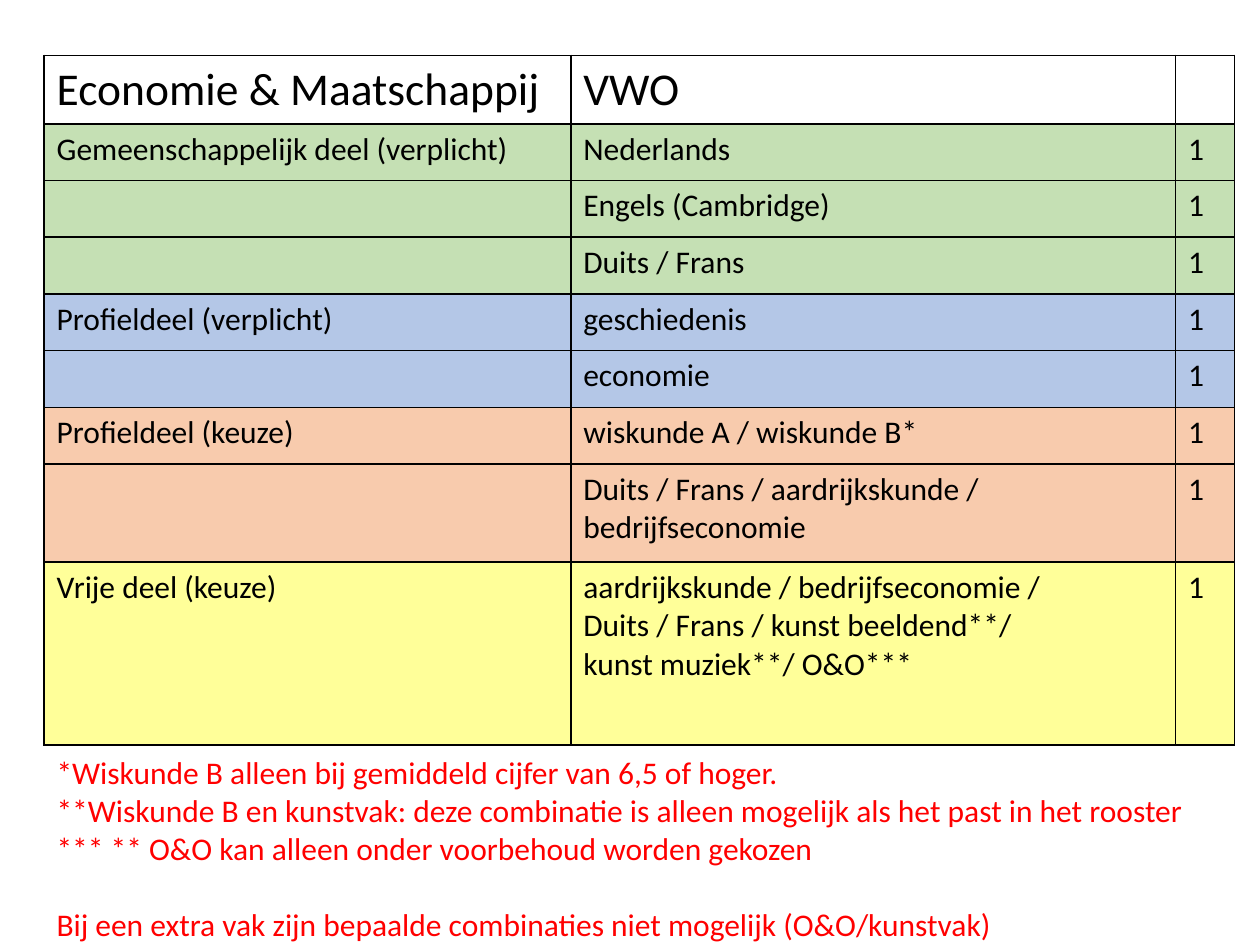
from dataclasses import dataclass

from lxml.etree import SubElement
from pptx import Presentation
from pptx.dml.color import RGBColor
from pptx.oxml.ns import qn
from pptx.util import Inches, Pt


@dataclass(frozen=True)
class Theme:
    font: str = "Calibri"
    heading_size: int = 26
    body_size: int = 18
    border_width: int = 1
    black: str = "000000"
    red: str = "FF0000"
    green: str = "C5E0B4"
    blue: str = "B4C7E7"
    orange: str = "F8CBAD"
    yellow: str = "FFFF99"


class SlideBuilder:
    def __init__(self, slide, theme):
        self.slide = slide
        self.theme = theme

    def add_lines(self, text_frame, lines, size, color):
        """Add one paragraph per line."""
        for index, line in enumerate(lines):
            paragraph = text_frame.paragraphs[0] if index == 0 else text_frame.add_paragraph()
            run = paragraph.add_run()
            run.text = line
            run.font.name = self.theme.font
            run.font.size = Pt(size)
            run.font.color.rgb = RGBColor.from_string(color)

    def add_borders(self, cell):
        properties = cell._tc.get_or_add_tcPr()
        for side in ("a:lnL", "a:lnR", "a:lnT", "a:lnB"):
            line = SubElement(properties, qn(side), w=str(Pt(self.theme.border_width)))
            fill = SubElement(line, qn("a:solidFill"))
            SubElement(fill, qn("a:srgbClr"), val=self.theme.black)

    def add_table(self, left, top, column_widths, rows):
        """Each row is (height, fill, cell texts); the first is the heading."""
        height = sum(row[0] for row in rows)
        frame = self.slide.shapes.add_table(
            len(rows), len(column_widths), Inches(left), Inches(top),
            Inches(sum(column_widths)), Inches(height))
        table = frame.table
        table.first_row = table.horz_banding = False
        for column, width in zip(table.columns, column_widths):
            column.width = Inches(width)
        for row_index, (row_height, fill, texts) in enumerate(rows):
            table.rows[row_index].height = Inches(row_height)
            size = self.theme.body_size if row_index else self.theme.heading_size
            for column_index, text in enumerate(texts):
                cell = table.cell(row_index, column_index)
                self.add_borders(cell)
                if fill:
                    cell.fill.solid()
                    cell.fill.fore_color.rgb = RGBColor.from_string(fill)
                else:
                    cell.fill.background()
                if text:
                    self.add_lines(cell.text_frame, text.split("\n"), size, self.theme.black)

    def add_notes_box(self, left, top, width, height, lines):
        """The last line stands apart from the ones above it."""
        box = self.slide.shapes.add_textbox(
            Inches(left), Inches(top), Inches(width), Inches(height))
        box.text_frame.word_wrap = True
        self.add_lines(box.text_frame, lines, self.theme.body_size, self.theme.red)
        box.text_frame.paragraphs[-1].space_before = Pt(1.2 * self.theme.body_size)


def main():
    presentation = Presentation()
    presentation.slide_width = Inches(10)
    presentation.slide_height = Inches(7.5)
    slide = presentation.slides.add_slide(presentation.slide_layouts[6])
    theme = Theme()
    builder = SlideBuilder(slide, theme)
    left = 0.35

    # Subject table
    single = 0.45
    builder.add_table(left, 0.44, (4.18, 4.8, 0.47), [
        (0.53, None, ("Economie & Maatschappij", "VWO", "")),
        (single, theme.green, ("Gemeenschappelijk deel (verplicht)", "Nederlands", "1")),
        (single, theme.green, ("", "Engels (Cambridge)", "1")),
        (single, theme.green, ("", "Duits / Frans", "1")),
        (single, theme.blue, ("Profieldeel (verplicht)", "geschiedenis", "1")),
        (single, theme.blue, ("", "economie", "1")),
        (single, theme.orange, ("Profieldeel (keuze)", "wiskunde A / wiskunde B*", "1")),
        (0.78, theme.orange, ("", "Duits / Frans / aardrijkskunde / bedrijfseconomie", "1")),
        (1.45, theme.yellow, (
            "Vrije deel (keuze)",
            "aardrijkskunde / bedrijfseconomie /\n"
            "Duits / Frans / kunst beeldend**/\n"
            "kunst muziek**/ O&O***",
            "1")),
    ])

    # Conditions below the table
    builder.add_notes_box(left, 5.93, 9.45, 1.92, [
        "*Wiskunde B alleen bij gemiddeld cijfer van 6,5 of hoger.",
        "**Wiskunde B en kunstvak: deze combinatie is alleen mogelijk als het past in het rooster",
        "*** ** O&O kan alleen onder voorbehoud worden gekozen",
        "Bij een extra vak zijn bepaalde combinaties niet mogelijk (O&O/kunstvak)",
    ])

    presentation.save("out.pptx")


if __name__ == "__main__":
    main()
